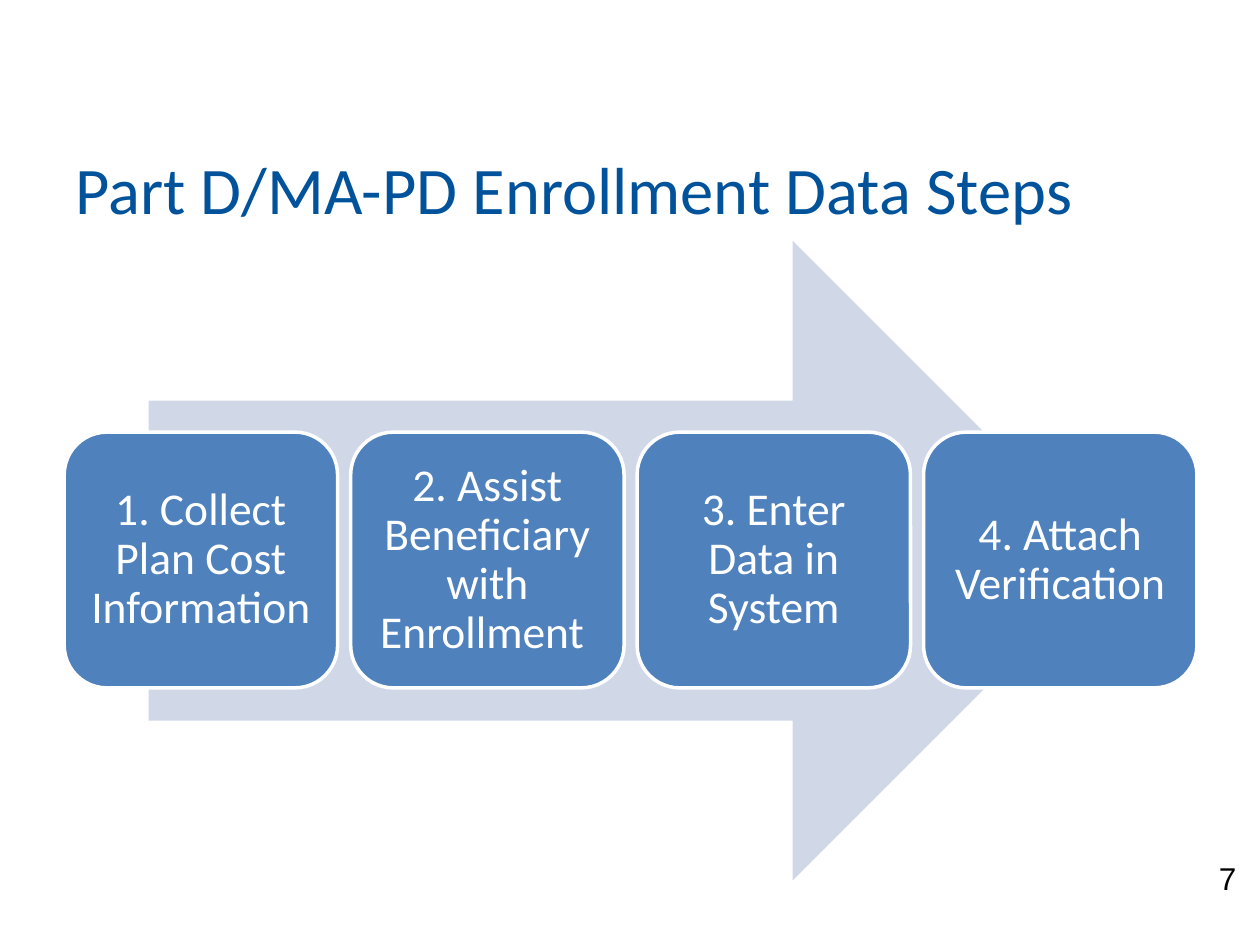
from pptx import Presentation
from pptx.dml.color import RGBColor
from pptx.enum.shapes import MSO_SHAPE as Shape
from pptx.enum.text import MSO_ANCHOR as Anchor, PP_ALIGN as Align
from pptx.util import Inches, Pt

# Content
TITLE = "Part D/MA-PD Enrollment Data Steps"
STEPS = [
    "1. Collect Plan Cost Information ",
    "2. Assist Beneficiary with Enrollment ",
    "3. Enter Data in System",
    "4. Attach Verification",
]
PAGE_NUMBER = "7"

# Colours
TITLE_BLUE = RGBColor(0x00, 0x52, 0x9B)
STEP_BLUE = RGBColor(0x4F, 0x81, 0xBD)
ARROW_BLUE = RGBColor(0xD0, 0xD8, 0xE8)
WHITE = RGBColor(0xFF, 0xFF, 0xFF)
BLACK = RGBColor(0x00, 0x00, 0x00)

# Step row, in inches
STEP_LEFT, STEP_TOP = 0.51, 3.43
STEP_WIDTH, STEP_HEIGHT = 2.17, 2.03
ROW_RIGHT = 9.5
STEP_PITCH = (ROW_RIGHT - STEP_WIDTH - STEP_LEFT) / (len(STEPS) - 1)
STEP_INSET = 0.11


def write(box, text, size, font, color, align, anchor):
    frame = box.text_frame
    frame.word_wrap = True
    frame.vertical_anchor = anchor
    frame.text = text
    para = frame.paragraphs[0]
    para.alignment = align
    span = para.runs[0]
    span.font.size = Pt(size)
    span.font.name = font
    span.font.color.rgb = color
    return para


def add_shape(page, kind, left, top, width, height, fill):
    shape = page.shapes.add_shape(
        kind, Inches(left), Inches(top), Inches(width), Inches(height))
    shape.shadow.inherit = False
    shape.fill.solid()
    shape.fill.fore_color.rgb = fill
    shape.line.fill.background()
    return shape


def add_step(page, index, text):
    step = add_shape(page, Shape.ROUNDED_RECTANGLE, STEP_LEFT + index * STEP_PITCH,
                     STEP_TOP, STEP_WIDTH, STEP_HEIGHT, STEP_BLUE)
    step.line.color.rgb = WHITE
    step.line.width = Pt(2)
    frame = step.text_frame
    frame.margin_left = frame.margin_right = Inches(STEP_INSET)
    frame.margin_top = frame.margin_bottom = Inches(STEP_INSET)
    para = write(step, text, 26, "Calibri", WHITE, Align.CENTER, Anchor.MIDDLE)
    para.line_spacing = 0.9


def main():
    deck = Presentation()
    deck.slide_width, deck.slide_height = Inches(10), Inches(7.5)
    page = deck.slides.add_slide(deck.slide_layouts[6])

    # Title
    title = page.shapes.add_textbox(Inches(0.5), Inches(1.16), Inches(9), Inches(0.67))
    write(title, TITLE, 38, "Calibri", TITLE_BLUE, Align.LEFT, Anchor.MIDDLE)

    # Arrow behind the steps
    add_shape(page, Shape.RIGHT_ARROW, 1.18, 1.91, 7.65, 5.08, ARROW_BLUE)

    # Steps
    for index, text in enumerate(STEPS):
        add_step(page, index, text)

    # Page number
    number = page.shapes.add_textbox(Inches(9.1), Inches(6.77), Inches(0.81), Inches(0.38))
    write(number, PAGE_NUMBER, 18, "Arial", BLACK, Align.RIGHT, Anchor.TOP)

    deck.save("out.pptx")


if __name__ == "__main__":
    main()
